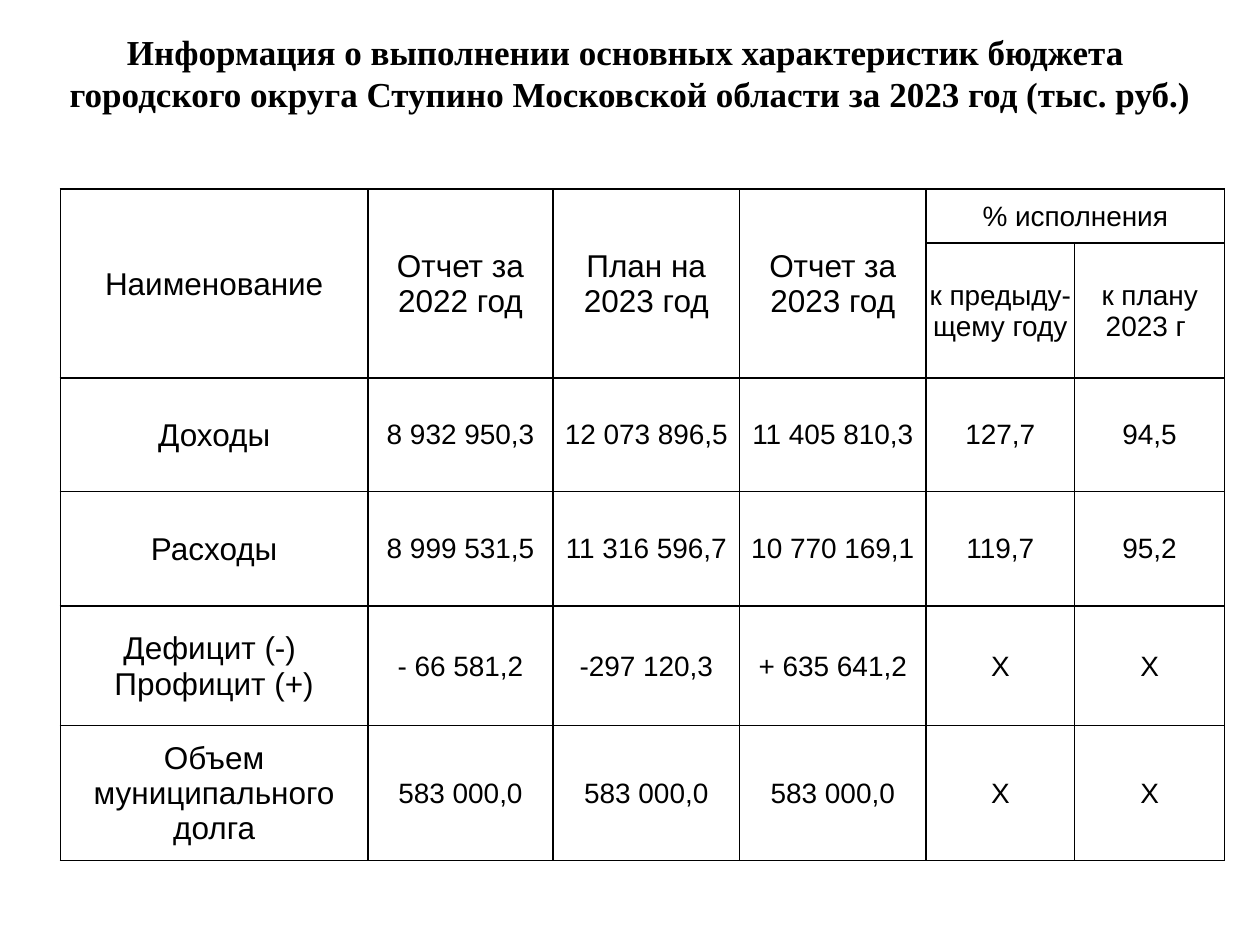
from dataclasses import dataclass

from lxml.etree import SubElement
from pptx import Presentation
from pptx.dml.color import RGBColor
from pptx.enum.text import MSO_ANCHOR, PP_ALIGN
from pptx.oxml.ns import qn
from pptx.table import Table, _Cell as Cell
from pptx.text.text import TextFrame
from pptx.util import Inches, Pt

BLACK = RGBColor(0x00, 0x00, 0x00)
WHITE = RGBColor(0xFF, 0xFF, 0xFF)

TITLE = (
    "Информация о выполнении основных характеристик бюджета \n"
    "городского округа Ступино Московской области за 2023 год (тыс. руб.)"
)
COL_WIDTHS = (2.44, 1.47, 1.48, 1.48, 1.18, 1.19)
ROW_HEIGHTS = (0.43, 1.07, 0.9, 0.91, 0.95, 1.07)


@dataclass(frozen=True)
class HeaderCell:
    text: str
    row: int
    col: int
    size: int
    rows: int = 1
    cols: int = 1


@dataclass(frozen=True)
class BudgetRow:
    name: str
    values: tuple[str, ...]


HEADERS = (
    HeaderCell("Наименование", 0, 0, 18, rows=2),
    HeaderCell("Отчет за 2022 год", 0, 1, 18, rows=2),
    HeaderCell("План на 2023 год", 0, 2, 18, rows=2),
    HeaderCell("Отчет за 2023 год", 0, 3, 18, rows=2),
    HeaderCell("% исполнения", 0, 4, 16, cols=2),
    HeaderCell("к предыду-щему году", 1, 4, 16),
    HeaderCell("к плану 2023 г ", 1, 5, 16),
)
BUDGET = (
    BudgetRow("Доходы", ("8 932 950,3", "12 073 896,5", "11 405 810,3", "127,7", "94,5")),
    BudgetRow("Расходы", ("8 999 531,5", "11 316 596,7", "10 770 169,1", "119,7", "95,2")),
    BudgetRow("Дефицит (-) \vПрофицит (+)",
              ("- 66 581,2", "-297 120,3", "+ 635 641,2", "Х", "Х")),
    BudgetRow("Объем муниципального долга",
              ("583 000,0", "583 000,0", "583 000,0", "Х", "Х")),
)


def write(tf: TextFrame, text: str, font: str, size: int, bold: bool = False) -> None:
    tf.text = text
    tf.word_wrap = True
    for p in tf.paragraphs:
        p.alignment = PP_ALIGN.CENTER
        p.font.name = font
        p.font.size = Pt(size)
        p.font.bold = bold
        p.font.color.rgb = BLACK


def style_cell(cell: Cell) -> None:
    """Give the cell thin black borders, a white fill and tight margins."""
    tc_pr = cell._tc.get_or_add_tcPr()
    for side in ("lnL", "lnR", "lnT", "lnB"):
        ln = SubElement(tc_pr, qn(f"a:{side}"), w=str(Pt(1)))
        fill = SubElement(ln, qn("a:solidFill"))
        SubElement(fill, qn("a:srgbClr"), val=str(BLACK))
    cell.fill.solid()
    cell.fill.fore_color.rgb = WHITE
    cell.margin_left = cell.margin_right = cell.margin_top = Inches(0.01)
    cell.margin_bottom = 0
    cell.vertical_anchor = MSO_ANCHOR.MIDDLE


def fill_table(table: Table) -> None:
    for column, width in zip(table.columns, COL_WIDTHS):
        column.width = Inches(width)
    for row, height in zip(table.rows, ROW_HEIGHTS):
        row.height = Inches(height)
    for cell in table.iter_cells():
        style_cell(cell)

    for h in HEADERS:
        cell = table.cell(h.row, h.col)
        if h.rows > 1 or h.cols > 1:
            cell.merge(table.cell(h.row + h.rows - 1, h.col + h.cols - 1))
        write(cell.text_frame, h.text, "Arial", h.size)
    for i, line in enumerate(BUDGET, start=2):
        for j, text in enumerate((line.name, *line.values)):
            write(table.cell(i, j).text_frame, text, "Arial", 16 if j else 18)


def main() -> None:
    prs = Presentation()
    prs.slide_width, prs.slide_height = Inches(10), Inches(7.5)
    s = prs.slides.add_slide(prs.slide_layouts[6])

    title = s.shapes.add_textbox(Inches(0), Inches(0.19), Inches(10), Inches(0.77))
    write(title.text_frame, TITLE, "Times New Roman", 20, bold=True)

    frame = s.shapes.add_table(
        len(ROW_HEIGHTS), len(COL_WIDTHS),
        Inches(0.48), Inches(1.5), Inches(sum(COL_WIDTHS)), Inches(sum(ROW_HEIGHTS)),
    )
    fill_table(frame.table)
    prs.save("out.pptx")


if __name__ == "__main__":
    main()
